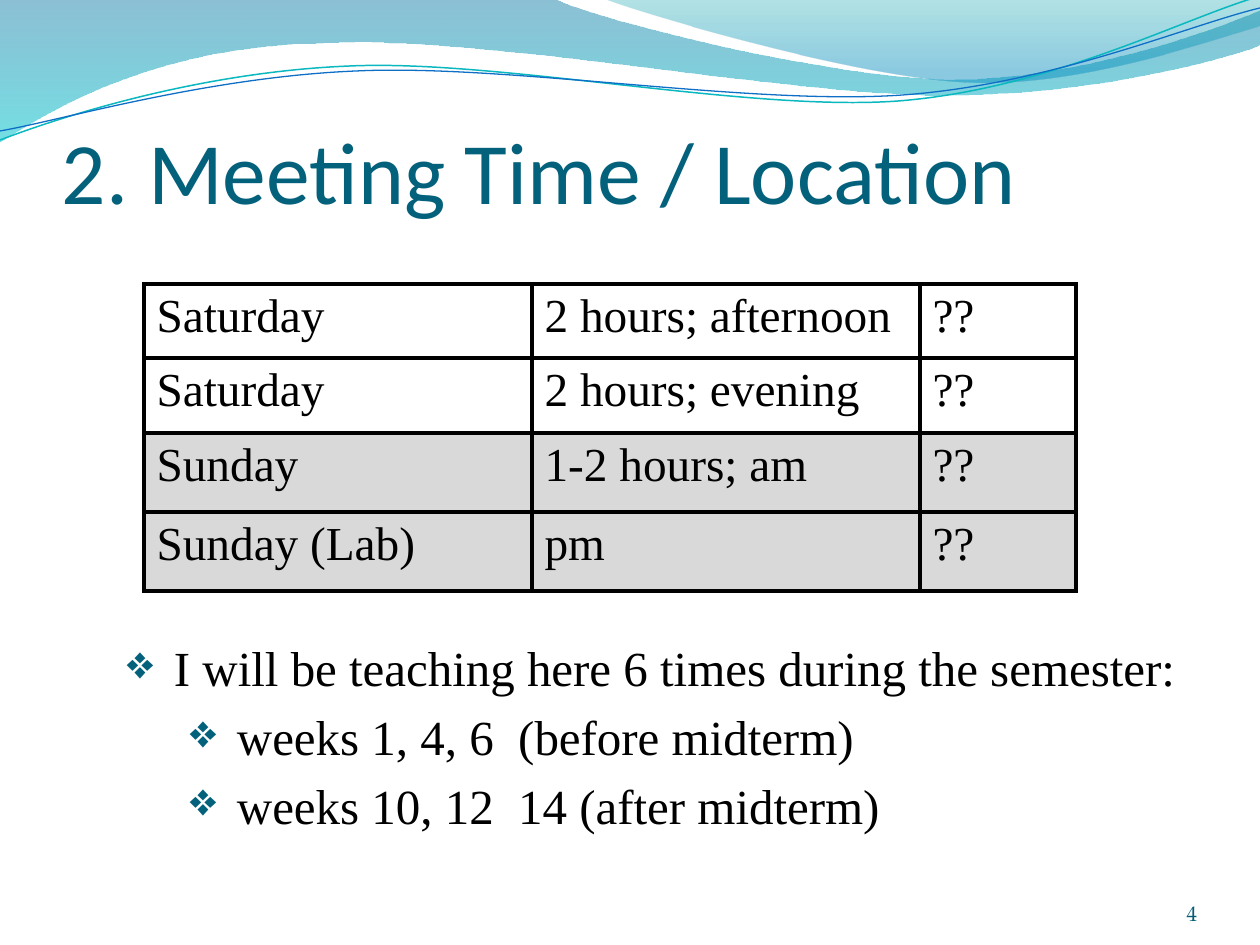
from lxml import etree
from pptx import Presentation
from pptx.dml.color import RGBColor
from pptx.enum.text import MSO_ANCHOR, PP_ALIGN
from pptx.oxml.ns import qn
from pptx.util import Pt

BOTTOM, TOP, RIGHT = MSO_ANCHOR.BOTTOM, MSO_ANCHOR.TOP, PP_ALIGN.RIGHT
SCALE = 914400 / 126
COLORS = {
    "title": "04617B", "number": "045D75", "text": "000000", "shade": "D9D9D9",
    "deep": "0074A1", "aqua": "00C6CF", "teal": "00A1A9", "blue": "008BBF",
    "teal line": "0AB8BF", "blue line": "0F6FC6",
}
SERIF = "Times New Roman"


def emu(px):
    return round(px * SCALE)


def style(para, name, size, color):
    para.font.name = name
    para.font.size = Pt(size)
    para.font.color.rgb = RGBColor.from_string(COLORS[color])


deck = Presentation()
deck.slide_width, deck.slide_height = emu(1260), emu(945)
page = deck.slides.add_slide(deck.slide_layouts[6])

waves = [
    ([(0, 0), (554, -1),
      (600, 21, 837, 79, 955, 79), (1075, 79, 1207, 33, 1260, 11), (1261, 45),
      (1239, 55, 1096, 96, 940, 95), (784, 95, 481, 35, 324, 43),
      (163, 45, 58, 105, -1, 142), (0, 0)],
     [(0, "deep", 45), (1, "aqua", 55)], None),
    ([(604, -1), (641, 14, 859, 78, 969, 82),
      (1079, 87, 1211, 40, 1260, 26), (1260, 0), (604, -1)],
     [(0, "teal", 30), (0.8, "blue", 45)], None),
    ([(0, 140), (60, 117, 199, 72, 349, 66),
      (498, 59, 747, 112, 898, 101), (1050, 89, 1182, 19, 1257, -3)],
     None, ("teal line", 0.85)),
    ([(0, 131), (59, 121, 207, 77, 357, 71),
      (508, 64, 752, 106, 903, 95), (1053, 84, 1186, 26, 1260, 8)],
     None, ("blue line", 0.75)),
]
for segments, gradient, line in waves:
    start, *rest = segments
    points = [(emu(x), emu(y)) for segment in rest for x, y in zip(segment[::2], segment[1::2])]
    builder = page.shapes.build_freeform(emu(start[0]), emu(start[1]))
    builder.add_line_segments(points, close=gradient is not None)
    wave = builder.convert_to_shape()
    wave.shadow.inherit = False
    steps = iter(list(wave._element.iter(qn("a:lnTo"))))
    for segment in rest:
        step = next(steps)
        if len(segment) == 6:
            curve = etree.Element(qn("a:cubicBezTo"))
            step.addprevious(curve)
            for corner in (step, next(steps), next(steps)):
                curve.append(corner[0])
                corner.getparent().remove(corner)
    if gradient:
        wave.line.fill.background()
        wave.fill.gradient()
        wave.fill.gradient_angle = 270
        for stop, (position, color, opacity) in zip(wave.fill.gradient_stops, gradient):
            stop.position = position
            stop.color.rgb = RGBColor.from_string(COLORS[color])
        for tint, (position, color, opacity) in zip(wave._element.iter(qn("a:srgbClr")), gradient):
            etree.SubElement(tint, qn("a:alpha"), val=str(opacity * 1000))
    else:
        wave.fill.background()
        wave.line.color.rgb = RGBColor.from_string(COLORS[line[0]])
        wave.line.width = Pt(line[1])

rows = [
    ("Saturday", "2 hours; afternoon", "??"),
    ("Saturday", "2 hours; evening", "??"),
    ("Sunday", "1-2 hours; am", "??"),
    ("Sunday (Lab)", "pm", "??"),
]
widths, heights = [388, 388, 156], [74, 75, 79, 79]
table = page.shapes.add_table(4, 3, emu(144), emu(284), emu(sum(widths)), emu(sum(heights))).table
table.first_row = table.horz_banding = False
for column, width in zip(table.columns, widths):
    column.width = emu(width)
for index, (row, height, texts) in enumerate(zip(table.rows, heights, rows)):
    row.height = emu(height)
    for cell, text in zip(row.cells, texts):
        cell.text = text
        style(cell.text_frame.paragraphs[0], SERIF, 27, "text")
        properties = cell._tc.get_or_add_tcPr()
        for side in ("a:lnL", "a:lnR", "a:lnT", "a:lnB"):
            border = etree.SubElement(properties, qn(side), w=str(Pt(2.25)))
            paint = etree.SubElement(border, qn("a:solidFill"))
            etree.SubElement(paint, qn("a:srgbClr"), val=COLORS["text"])
        if index < 2:
            cell.fill.background()
        else:
            cell.fill.solid()
            cell.fill.fore_color.rgb = RGBColor.from_string(COLORS["shade"])

title = [("2. Meeting Time / Location", 0, None)]
schedule = [
    ("I will be teaching here 6 times during the semester:", 0, 47),
    ("weeks 1, 4, 6  (before midterm)", 1, 110),
    ("weeks 10, 12  14 (after midterm)", 1, 110),
]
number = [("4", 0, None)]
boxes = [
    (title, (62, 64, 1134, 158), (0, 6, 0, 0), BOTTOM, None, ("Calibri", 50, "title"), 0),
    (schedule, (114, 632, 1081, 238), (13, 6, 13, 6), TOP, None, (SERIF, 28, "text"), 5.6),
    (number, (1092, 876, 105, 50), (0, 0, 0, 0), BOTTOM, RIGHT,
     ("TeX Gyre Pagella", 12, "number"), 0),
]
for lines, place, insets, anchor, align, font, gap in boxes:
    box = page.shapes.add_textbox(*[emu(length) for length in place])
    frame = box.text_frame
    frame.word_wrap = True
    frame.vertical_anchor = anchor
    frame.margin_left, frame.margin_top, frame.margin_right, frame.margin_bottom = map(emu, insets)
    for index, (text, level, indent) in enumerate(lines):
        para = frame.add_paragraph() if index else frame.paragraphs[0]
        para.text = text
        para.level = level
        para.alignment = align
        para.space_before = Pt(gap)
        style(para, *font)
        if indent:
            properties = para._p.get_or_add_pPr()
            properties.set("marL", str(emu(indent)))
            properties.set("indent", str(-emu(47)))
            bullet_color = etree.Element(qn("a:buClr"))
            etree.SubElement(bullet_color, qn("a:srgbClr"), val=COLORS["title"])
            bullet_size = etree.Element(qn("a:buSzPct"), val="95000")
            bullet = etree.Element(qn("a:buChar"), char="❖")
            for offset, part in enumerate((bullet_color, bullet_size, bullet), 1):
                properties.insert(offset, part)

deck.save("out.pptx")
